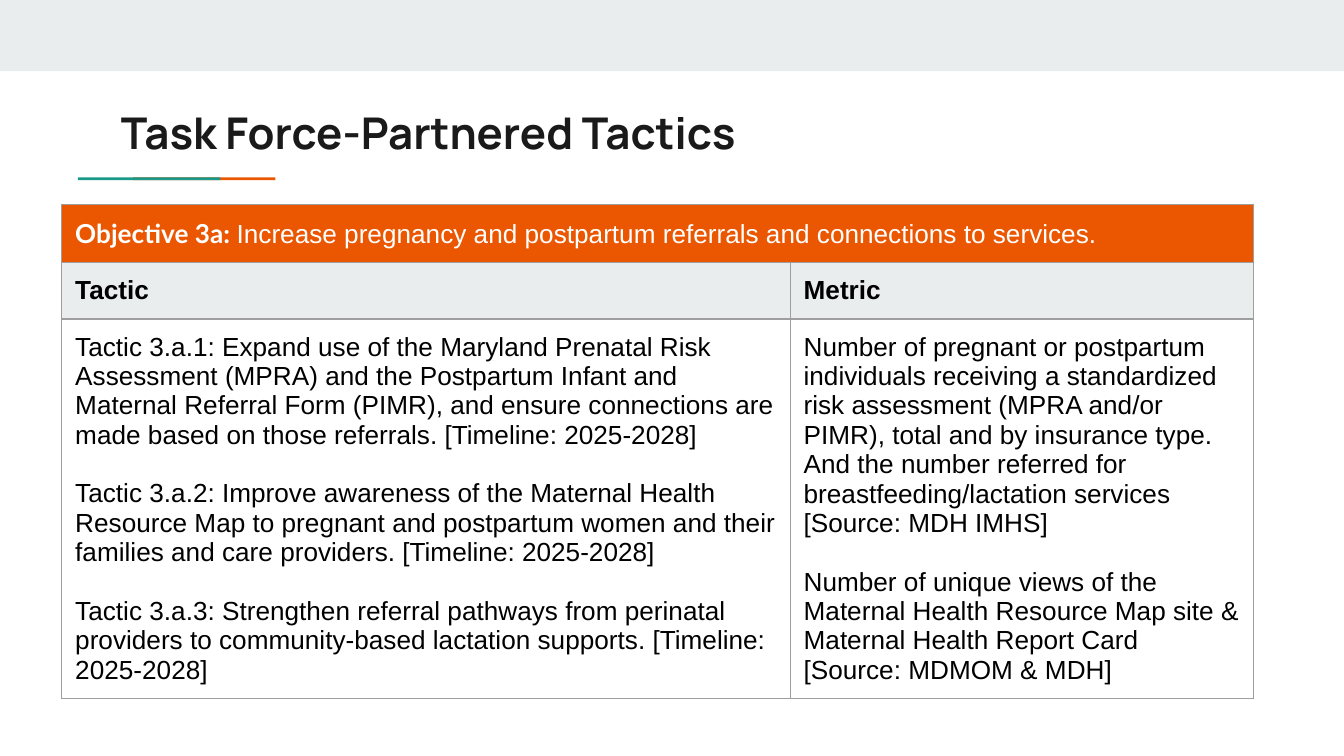
from lxml import etree
from pptx import Presentation
from pptx.dml.color import RGBColor
from pptx.enum.shapes import MSO_SHAPE
from pptx.enum.text import MSO_ANCHOR, PP_ALIGN
from pptx.oxml.ns import qn
from pptx.util import Inches, Pt

RECTANGLE = MSO_SHAPE.RECTANGLE
LEFT = PP_ALIGN.LEFT
TOP, MIDDLE = MSO_ANCHOR.TOP, MSO_ANCHOR.MIDDLE

ORANGE = RGBColor(0xEB, 0x56, 0x00)
TEAL = RGBColor(0x1A, 0x99, 0x88)
PALE = RGBColor(0xE9, 0xED, 0xEE)
WHITE = RGBColor(0xFF, 0xFF, 0xFF)
BLACK = RGBColor(0, 0, 0)
INK = RGBColor(0x1A, 0x1A, 0x1A)
BORDER = RGBColor(0x9E, 0x9E, 0x9E)

SLIDE_WIDTH = 10
SLIDE_HEIGHT = SLIDE_WIDTH * 9 / 16
INSET = Inches(0.1)
BODY_SIZE = Pt(14)
BLOCK_GAP = Pt(15.7)

TITLE = "Task Force-Partnered Tactics"
OBJECTIVE = ("Objective 3a: ",
             "Increase pregnancy and postpartum referrals and connections to services.")
HEADINGS = ("Tactic", "Metric")
# Each column holds blocks; a block is a list of paragraphs.
COLUMNS = (
    [
        ["Tactic 3.a.1: Expand use of the Maryland Prenatal Risk Assessment (MPRA) and the "
         "Postpartum Infant and Maternal Referral Form (PIMR), and ensure connections are "
         "made based on those referrals. [Timeline: 2025-2028]"],
        ["Tactic 3.a.2: Improve awareness of the Maternal Health Resource Map to pregnant and "
         "postpartum women and their families and care providers. [Timeline: 2025-2028]"],
        ["Tactic 3.a.3: Strengthen referral pathways from perinatal providers to "
         "community-based lactation supports. [Timeline:",
         "2025-2028]"],
    ],
    [
        ["Number of pregnant or postpartum",
         "individuals receiving a standardized risk assessment (MPRA and/or PIMR), total and "
         "by insurance type. And the number referred for breastfeeding/lactation services "
         "[Source: MDH IMHS]"],
        ["Number of unique views of the Maternal Health Resource Map site & Maternal Health "
         "Report Card [Source: MDMOM & MDH]"],
    ],
)
COLUMN_WIDTHS = (5.42, 3.45)
ROW_HEIGHTS = (0.42, 0.42, 2.82)
BARS = (  # left, top, width, height, colour
    (0, 0, SLIDE_WIDTH, 0.53, PALE),
    (0.99, 1.32, 1.06, 0.02, ORANGE),
    (0.58, 1.32, 1.06, 0.02, TEAL),
)


def add_bar(slide, left, top, width, height, colour):
    bar = slide.shapes.add_shape(RECTANGLE, *map(Inches, (left, top, width, height)))
    bar.shadow.inherit = False
    bar.fill.solid()
    bar.fill.fore_color.rgb = colour
    bar.line.fill.background()


def add_run(paragraph, text, colour=BLACK, bold=False, name="Arial", size=BODY_SIZE):
    run = paragraph.add_run()
    run.text = text
    font = run.font
    font.name, font.size, font.bold = name, size, bold
    font.color.rgb = colour


def set_insets(holder):
    holder.margin_left = holder.margin_right = INSET
    holder.margin_top = holder.margin_bottom = INSET


def format_cell(cell, fill):
    set_insets(cell)
    cell.vertical_anchor = TOP
    properties = cell._tc.get_or_add_tcPr()
    for side in ("lnL", "lnR", "lnT", "lnB"):
        line = etree.SubElement(properties, qn("a:" + side), w=str(Pt(0.75)))
        solid = etree.SubElement(line, qn("a:solidFill"))
        etree.SubElement(solid, qn("a:srgbClr"), val=str(BORDER))
    if fill is None:
        cell.fill.background()
    else:
        cell.fill.solid()
        cell.fill.fore_color.rgb = fill


def write_blocks(frame, blocks):
    """Write the paragraphs of each block, with a gap before every later block."""
    paragraph = frame.paragraphs[0]
    for block_index, block in enumerate(blocks):
        for line_index, text in enumerate(block):
            if block_index or line_index:
                paragraph = frame.add_paragraph()
            if block_index and not line_index:
                paragraph.space_before = BLOCK_GAP
            add_run(paragraph, text)


def add_title(slide):
    title = slide.shapes.title
    title.left, title.top, title.width, title.height = map(Inches, (0.8, 0.69, 8.41, 0.59))
    frame = title.text_frame
    set_insets(frame)
    frame.word_wrap = True
    frame.vertical_anchor = MIDDLE
    paragraph = frame.paragraphs[0]
    paragraph.alignment = LEFT
    add_run(paragraph, TITLE, INK, True, "Manrope", Pt(23.4))


def add_tactics_table(slide):
    table = slide.shapes.add_table(
        len(ROW_HEIGHTS), len(COLUMN_WIDTHS), Inches(0.46), Inches(1.52),
        Inches(sum(COLUMN_WIDTHS)), Inches(sum(ROW_HEIGHTS))).table
    table.first_row = table.horz_banding = False
    for column, width in zip(table.columns, COLUMN_WIDTHS):
        column.width = Inches(width)
    for row, height, fill in zip(table.rows, ROW_HEIGHTS, (ORANGE, PALE, None)):
        row.height = Inches(height)
        for cell in row.cells:
            format_cell(cell, fill)

    table.cell(0, 0).merge(table.cell(0, 1))
    objective = table.cell(0, 0).text_frame.paragraphs[0]
    label, goal = OBJECTIVE
    add_run(objective, label, WHITE, True, "Lato")
    add_run(objective, goal, WHITE)
    for index, (heading, blocks) in enumerate(zip(HEADINGS, COLUMNS)):
        add_run(table.cell(1, index).text_frame.paragraphs[0], heading, bold=True)
        write_blocks(table.cell(2, index).text_frame, blocks)


def main():
    presentation = Presentation()
    presentation.slide_width = Inches(SLIDE_WIDTH)
    presentation.slide_height = Inches(SLIDE_HEIGHT)
    slide = presentation.slides.add_slide(presentation.slide_layouts.get_by_name("Title Only"))
    for bar in BARS:
        add_bar(slide, *bar)
    add_title(slide)
    add_tactics_table(slide)
    presentation.save("out.pptx")


if __name__ == "__main__":
    main()
